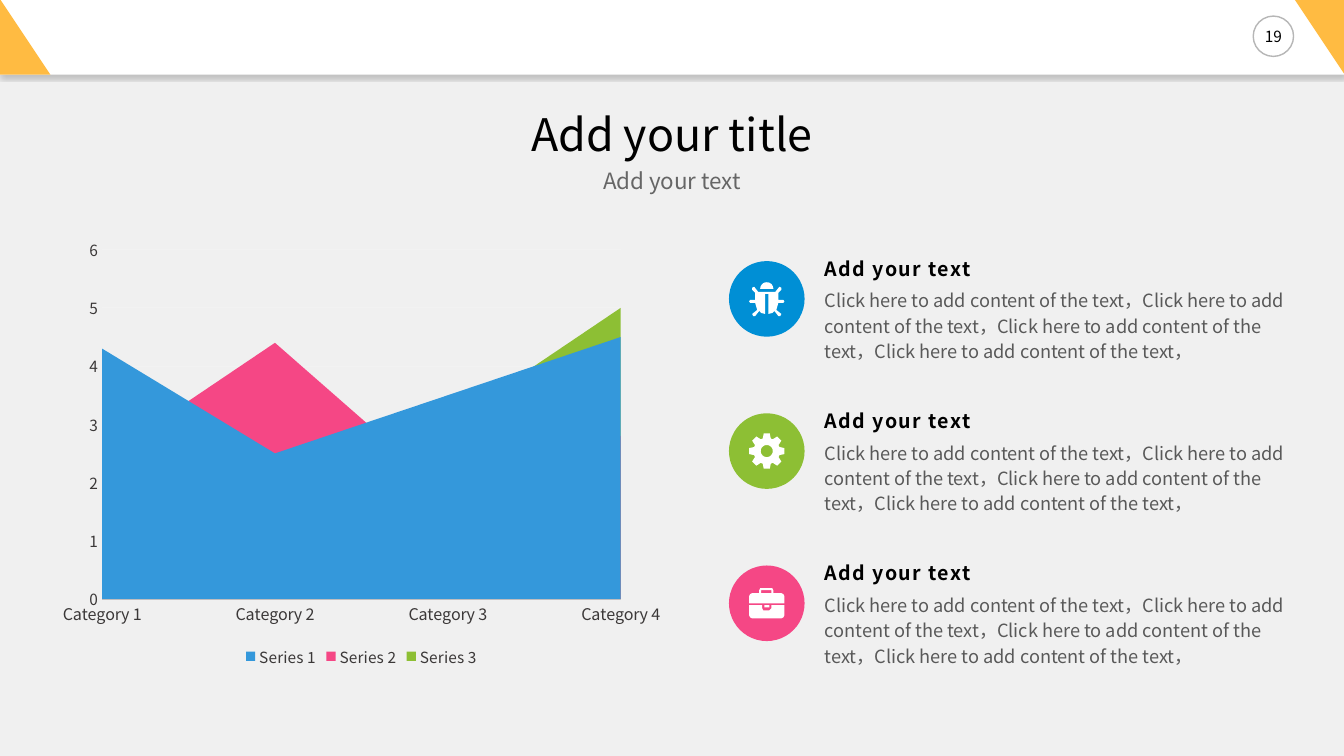
from math import cos, pi, sin

from lxml.etree import SubElement
from pptx import Presentation
from pptx.chart.data import CategoryChartData
from pptx.dml.color import RGBColor
from pptx.enum.chart import XL_CHART_TYPE, XL_LEGEND_POSITION, XL_TICK_MARK
from pptx.enum.shapes import MSO_SHAPE
from pptx.enum.text import MSO_ANCHOR, MSO_AUTO_SIZE, PP_ALIGN
from pptx.oxml.ns import qn
from pptx.util import Inches, Pt

FONT = "Noto Sans CJK JP"
BLUE, GREEN, PINK, AMBER = "008FD5", "8DBF34", "F54785", "FFBB42"
WHITE, BLACK, CHART_TEXT = "FFFFFF", "000000", "3B3838"
SLIDE_WIDTH, SLIDE_HEIGHT = 13.33, 7.5
ITEM_BODY = "Click here to add content of the text，" * 4


def paint(colour_format, colour):
    colour_format.rgb = RGBColor.from_string(colour)


def style_shape(shape, colour):
    shape.shadow.inherit = False
    shape.fill.solid()
    paint(shape.fill.fore_color, colour)
    shape.line.fill.background()


def add_preset(slide, preset, box, colour):
    shape = slide.shapes.add_shape(preset, *map(Inches, box))
    style_shape(shape, colour)
    return shape


def style_font(font, size, colour):
    font.name = FONT
    font.size = Pt(size)
    paint(font.color, colour)


def write(holder, text, size, colour, spacing=0.9, align=PP_ALIGN.LEFT, anchor=MSO_ANCHOR.TOP):
    frame = holder.text_frame
    frame.text = text
    frame.word_wrap = True
    frame.auto_size = MSO_AUTO_SIZE.NONE
    frame.vertical_anchor = anchor
    frame.margin_left = frame.margin_right = frame.margin_top = frame.margin_bottom = 0
    paragraph = frame.paragraphs[0]
    paragraph.alignment = align
    paragraph.line_spacing = spacing
    paragraph.space_before = Pt(0)
    run = paragraph.runs[0]
    style_font(run.font, size, colour)
    SubElement(run.font._element, qn("a:ea"), typeface=FONT)
    return run


def add_text(slide, box, *args, **kwargs):
    return write(slide.shapes.add_textbox(*map(Inches, box)), *args, **kwargs)


def arc(centre_x, centre_y, radius, start, sweep, steps=24):
    angles = [start + sweep * step / steps for step in range(steps + 1)]
    return [(centre_x + radius * cos(a), centre_y + radius * sin(a)) for a in angles]


def bug_outlines():
    right = [(19, 12), (19, 32), (23, 31), (25, 29), (29, 34), (31, 34), (32, 32),
             (27, 28), (29, 21), (34, 21), (35, 19.5), (34, 18), (29, 18), (29, 11),
             (32, 8), (32, 6), (30, 5), (26, 10)]
    left = [(35 - x, y) for x, y in reversed(right)]
    return [right + left, arc(17.5, 7, 6.5, pi, pi)]


def gear_outlines():
    tooth = [(-4, -12.5), (-3, -17.5), (3, -17.5), (4, -12.5)]
    rim = []
    for turn in range(8):
        c, s = cos(turn * pi / 4), sin(turn * pi / 4)
        rim += [(17.5 + x * c - y * s, 17.5 + x * s + y * c) for x, y in tooth]
    return [rim, arc(17.5, 17.5, 6, 0, 2 * pi)]


def briefcase_outlines():
    lid = [(0, 15), (0, 8), (1, 6), (3, 5), (10, 5), (10, 2), (11, 0), (23, 0),
           (24, 2), (24, 5), (32, 5), (34, 6), (35, 8), (35, 15)]
    base = [(35, 17), (35, 27), (34, 29), (32, 30), (3, 30), (1, 29), (0, 27),
            (0, 17), (13, 17), (13, 20), (14, 22), (20, 22), (22, 20), (22, 17)]
    handle_gap = [(12, 2), (22, 2), (22, 5), (12, 5)]
    clasp = [(15, 17), (20, 17), (20, 19), (15, 19)]
    return [lid, base, handle_gap, clasp]


def add_icon(slide, left, top, outlines):
    scaled = [[(x * 10, y * 10) for x, y in outline] for outline in outlines]
    builder = slide.shapes.build_freeform(*scaled[0][0], scale=Inches(0.001))
    for index, outline in enumerate(scaled):
        if index:
            builder.move_to(*outline[0])
        builder.add_line_segments(outline[1:], close=True)
    style_shape(builder.convert_to_shape(Inches(left), Inches(top)), WHITE)


def add_header(slide, left, top, width, height):
    band = add_preset(slide, MSO_SHAPE.RECTANGLE, (left, top, width, height), WHITE)
    effects = band._element.spPr.find(qn("a:effectLst"))
    shadow = SubElement(effects, qn("a:outerShdw"), blurRad=str(Pt(3)), dist=str(Pt(2)),
                        dir="5400000", algn="t", rotWithShape="0")
    tint = SubElement(shadow, qn("a:srgbClr"), val=BLACK)
    SubElement(tint, qn("a:alpha"), val="20000")
    badge_box = (left + width - 0.9, top + 0.17, 0.4, 0.4)
    badge = add_preset(slide, MSO_SHAPE.OVAL, badge_box, WHITE)
    paint(badge.line.color, "B6B6B6")
    badge.line.width = Pt(1)
    write(badge, "19", 11, BLACK, 1, PP_ALIGN.CENTER, MSO_ANCHOR.MIDDLE)
    add_preset(slide, MSO_SHAPE.RIGHT_TRIANGLE, (left, top, 0.5, height), AMBER)
    right_corner = add_preset(slide, MSO_SHAPE.RIGHT_TRIANGLE,
                              (left + width - 0.5, top - 0.01, 0.5, height), AMBER)
    right_corner.rotation = 180


def add_headline(slide, left, top, width):
    rows = [(slide.shapes.title, 0, 0.54, "Add your title", 32, BLACK),
            (slide.placeholders[1], 0.58, 0.27, "Add your text", 16, "666666")]
    for holder, offset, height, text, size, colour in rows:
        holder.left, holder.top = Inches(left), Inches(top + offset)
        holder.width, holder.height = Inches(width), Inches(height)
        write(holder, text, size, colour, align=PP_ALIGN.CENTER, anchor=MSO_ANCHOR.MIDDLE)


def add_area_chart(slide, left, top, width, height):
    series_data = [("Series 1", (4.3, 2.5, 3.5, 4.5), "3498DB"),
                   ("Series 2", (2.4, 4.4, 1.8, 2.8), PINK),
                   ("Series 3", (2, 2, 3, 5), GREEN)]
    data = CategoryChartData()
    data.categories = [f"Category {number}" for number in range(1, 5)]
    for name, values, _ in series_data:
        data.add_series(name, values)
    chart = slide.shapes.add_chart(
        XL_CHART_TYPE.AREA, *map(Inches, (left, top, width, height)), data).chart
    style_font(chart.font, 11, CHART_TEXT)
    chart.has_title = False
    chart.has_legend = True
    chart.legend.position = XL_LEGEND_POSITION.BOTTOM
    chart.legend.include_in_layout = False
    style_font(chart.legend.font, 11, CHART_TEXT)
    chart.plots[0].vary_by_categories = False
    for series, (_, _, colour) in zip(chart.plots[0].series, series_data):
        series.format.fill.solid()
        paint(series.format.fill.fore_color, colour)
        series.format.line.fill.background()
    categories, values = chart.category_axis, chart.value_axis
    for axis, size in ((categories, 11.5), (values, 11)):
        axis.major_tick_mark = axis.minor_tick_mark = XL_TICK_MARK.NONE
        style_font(axis.tick_labels.font, size, CHART_TEXT)
    categories.has_major_gridlines = False
    values.has_major_gridlines = True
    for line, colour in ((categories.format.line, "D9D9D9"),
                         (values.major_gridlines.format.line, "F2F2F2")):
        paint(line.color, colour)
        line.width = Pt(0.75)
    values.format.line.fill.background()
    values.minimum_scale, values.maximum_scale, values.major_unit = 0, 6, 1


def add_item(slide, left, top, width, colour, outlines, icon_height):
    disc = 0.75
    add_preset(slide, MSO_SHAPE.OVAL, (left, top + 0.02, disc, disc), colour)
    add_icon(slide, left + (disc - 0.35) / 2, top + 0.02 + (disc - icon_height) / 2, outlines)
    text_left, text_width = left + 0.95, width - 0.95
    heading = add_text(slide, (text_left, top, text_width, 0.35), "Add your text", 14, BLACK)
    heading.font.bold = True
    heading.font._element.set("spc", "100")
    add_text(slide, (text_left, top + 0.27, text_width, 0.91), ITEM_BODY, 13, "595959", 1.16)


def add_items(slide, left, top, width, pitch):
    items = [(BLUE, bug_outlines(), 0.34), (GREEN, gear_outlines(), 0.35),
             (PINK, briefcase_outlines(), 0.3)]
    for row, item in enumerate(items):
        add_item(slide, left, top + row * pitch, width, *item)


def main():
    deck = Presentation()
    deck.slide_width, deck.slide_height = Inches(SLIDE_WIDTH), Inches(SLIDE_HEIGHT)
    slide = deck.slides.add_slide(deck.slide_layouts[0])
    slide.background.fill.solid()
    paint(slide.background.fill.fore_color, "F0F0F0")
    add_header(slide, 0, -0.01, SLIDE_WIDTH, 0.75)
    add_headline(slide, 0.5, 1.09, SLIDE_WIDTH - 1)
    add_area_chart(slide, 0.5, 2.28, 6.17, 4.38)
    add_items(slide, 7.23, 2.57, 5.62, 1.51)
    deck.save("out.pptx")


if __name__ == "__main__":
    main()
